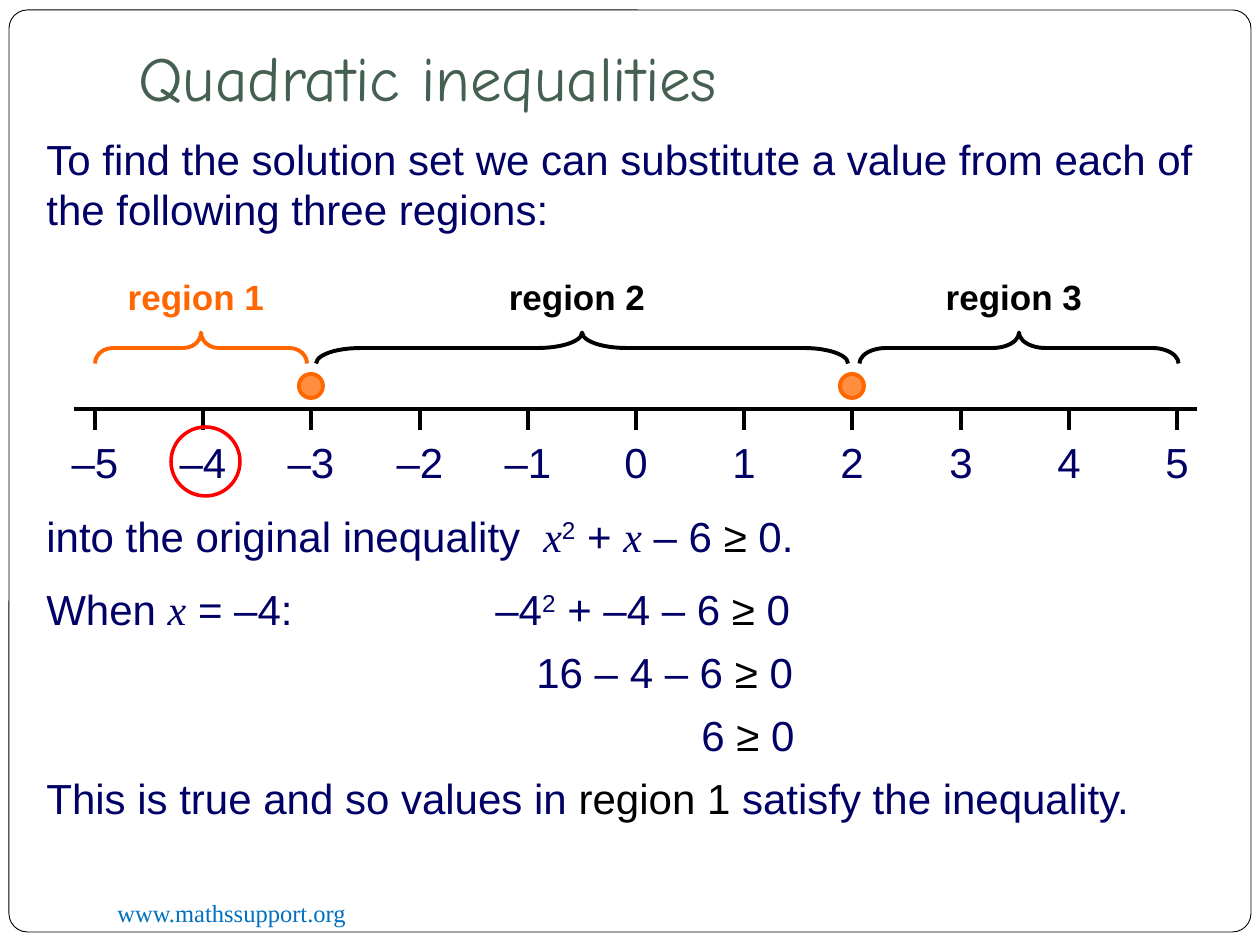
from lxml import etree
from pptx import Presentation
from pptx import util as u
from pptx.dml.color import RGBColor
from pptx.enum import shapes, text
from pptx.oxml.ns import qn

SCALE = 914400 / 126
WHITE = RGBColor(255, 255, 255)
BLACK = RGBColor(0, 0, 0)
NAVY = RGBColor(0x01, 0x00, 0x66)
GREEN = RGBColor(0x45, 0x5F, 0x51)
BLUE = RGBColor(0x00, 0x70, 0xC0)
ORANGE = RGBColor(0xFF, 0x66, 0x00)
PEACH = RGBColor(0xFF, 0x8E, 0x41)
RED = RGBColor(255, 0, 0)
SANS, SERIF, HAND = "Arial", "Times New Roman", "Comic Neue"
LEFT, MID = text.PP_ALIGN.LEFT, text.PP_ALIGN.CENTER
TOP, LOW = text.MSO_ANCHOR.TOP, text.MSO_ANCHOR.BOTTOM
KIND = shapes.MSO_SHAPE

VAR = ("x", dict(face=SERIF, slant=True))
SQUARE = ("2", dict(raised=True))
ATLEAST = ("≥ ", dict(ink=BLACK))


def px(n):
    return u.Emu(round(n * SCALE))


def write(para, words, size=24, face=SANS, ink=NAVY, bold=False,
          slant=False, raised=False):
    run = para.add_run()
    run.text = words
    font = run.font
    font.size, font.name = u.Pt(size), face
    font.bold, font.italic = bold, slant
    font.color.rgb = ink
    if raised:
        run._r.get_or_add_rPr().set("baseline", "30000")


class Board:
    def __init__(self, slide, weight=2.25):
        self.items = slide.shapes
        self.weight = weight

    def label(self, box, *parts, wrap=False, align=LEFT, anchor=TOP, foot=6, **style):
        frame = self.items.add_textbox(*map(px, box)).text_frame
        frame.word_wrap = wrap
        frame.vertical_anchor = anchor
        frame.margin_bottom = px(foot)
        para = frame.paragraphs[0]
        para.alignment = align
        for part in parts:
            words, extra = (part, {}) if isinstance(part, str) else part
            write(para, words, **{**style, **extra})

    def shape(self, kind, box, line, fill=None, weight=None):
        item = self.items.add_shape(kind, *map(px, box))
        item.shadow.inherit = False
        if fill is None:
            item.fill.background()
        else:
            item.fill.solid()
            item.fill.fore_color.rgb = fill
        item.line.color.rgb = line
        item.line.width = u.Pt(weight or self.weight)
        return item

    def line(self, *ends):
        item = self.items.add_connector(shapes.MSO_CONNECTOR.STRAIGHT, *map(px, ends))
        item.line.color.rgb = BLACK
        item.line.width = u.Pt(self.weight)
        etree.SubElement(item._element.spPr, qn("a:effectLst"))

    def brace(self, mid, span, name, ink):
        thick, level, wide = 31, 348, 176
        item = self.shape(KIND.LEFT_BRACE,
                          (mid - thick / 2, level - span / 2, thick, span), ink)
        item.rotation = 90
        item.adjustments[0] = span / thick / 12
        self.label((mid - 5 - wide / 2, 269, wide, 54), name, align=MID,
                   size=20, ink=ink, bold=True)


def tick(n):
    return round(636 + 108.2 * n)


def axis(board):
    level = 409
    board.line(74, level, 1197, level)
    for n in range(-5, 6):
        x = tick(n)
        board.line(x, level, x, level + 21)
        wide = 76 if n < 0 else 52
        board.label((x - wide / 2, 430, wide, 63), str(n).replace("-", "–"), align=MID)
    for root in (-3, 2):
        board.shape(KIND.OVAL, (tick(root) - 12, 374, 24, 24), ORANGE, PEACH)
    board.shape(KIND.OVAL, (171, 427, 69, 69), RED, weight=2)


def main():
    deck = Presentation()
    deck.slide_width, deck.slide_height = px(1260), px(945)
    board = Board(deck.slides.add_slide(deck.slide_layouts[6]))

    frame = board.shape(KIND.ROUNDED_RECTANGLE, (9, 10, 1242, 922), BLACK, WHITE, 0.5)
    frame.adjustments[0] = 0.02
    board.label((105, 892, 410, 43), "www.mathssupport.org", wrap=True,
                size=14, face=SERIF, ink=BLUE)
    board.label((126, 38, 1071, 89), "Quadratic inequalities", wrap=True,
                anchor=LOW, foot=13, size=36, face=HAND, ink=GREEN)
    board.label((34, 127, 1188, 113), "To find the solution set we can substitute "
                "a value from each of the following three regions:", wrap=True)

    axis(board)
    board.brace(201, 212, "region 1", ORANGE)
    board.brace(582, 532, "region 2", BLACK)
    board.brace(1019, 319, "region 3", BLACK)

    board.label((34, 504, 510, 63), "into the original inequality", wrap=True)
    board.label((531, 504, 289, 63), VAR, SQUARE, " + ", VAR, " – 6 ", ATLEAST, "0.")
    board.label((34, 577, 300, 63), "When ", VAR, " = –4:", wrap=True)
    board.label((483, 577, 321, 63), "–4", SQUARE, " + –4 – 6 ", ATLEAST, "0")
    board.label((524, 640, 294, 63), "16 – 4 – 6 ", ATLEAST, "0")
    board.label((689, 703, 130, 63), "6 ", ATLEAST, "0")
    board.label((34, 766, 1130, 63), "This is true and so values in ",
                ("region 1", dict(ink=BLACK)), " satisfy the inequality.", wrap=True)
    deck.save("out.pptx")


if __name__ == "__main__":
    main()
